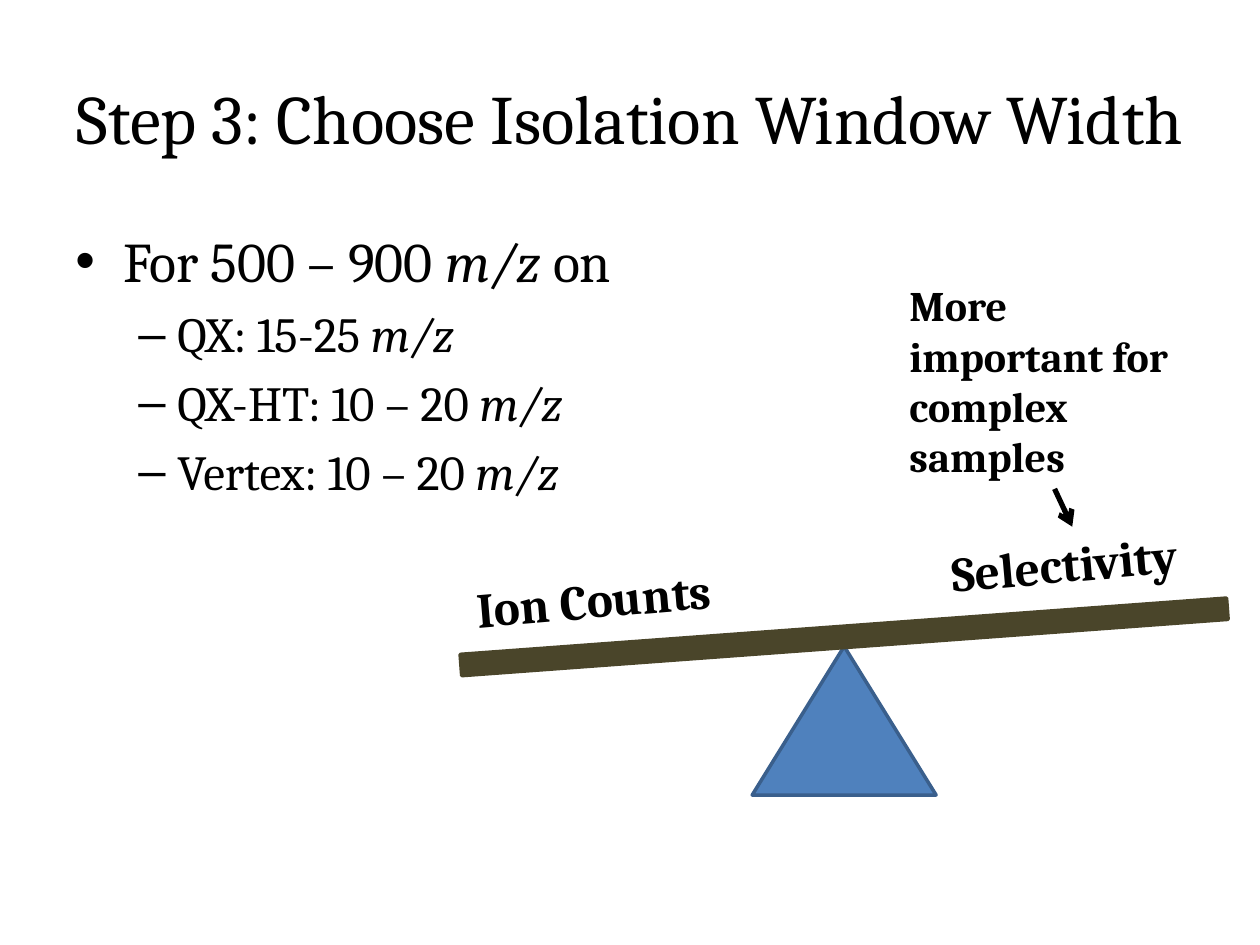
from lxml.etree import SubElement
from pptx import Presentation
from pptx.dml.color import RGBColor
from pptx.enum.shapes import MSO_CONNECTOR, MSO_SHAPE
from pptx.enum.text import MSO_ANCHOR, PP_ALIGN
from pptx.oxml.ns import qn
from pptx.util import Inches, Pt

FONT = "Cambria"
BLACK = RGBColor(0x00, 0x00, 0x00)
BLUE = RGBColor(0x4F, 0x81, 0xBD)
DARK_BLUE = RGBColor(0x3A, 0x5F, 0x8C)
BROWN = RGBColor(0x4A, 0x45, 0x2A)

INSTRUMENT_WINDOWS = ["QX: 15-25 ", "QX-HT: 10 – 20 ", "Vertex: 10 – 20 "]


def set_font(para, size, bold=False):
    para.font.name = FONT
    para.font.size = Pt(size)
    para.font.bold = bold
    para.font.color.rgb = BLACK


def add_box(page, left, top, width, height):
    box = page.shapes.add_textbox(Inches(left), Inches(top), Inches(width), Inches(height))
    box.text_frame.word_wrap = True
    return box


def add_title(page, text):
    frame = add_box(page, 0.5, 0.3, 9, 1.25).text_frame
    frame.margin_left = frame.margin_right = Inches(0.05)
    frame.vertical_anchor = MSO_ANCHOR.MIDDLE
    para = frame.paragraphs[0]
    para.text = text
    para.alignment = PP_ALIGN.CENTER
    set_font(para, 39.6)


def add_label(page, text, left, top, width, height, size, rotation=0):
    box = add_box(page, left, top, width, height)
    box.rotation = rotation
    para = box.text_frame.paragraphs[0]
    para.text = text
    set_font(para, size, bold=True)


def format_bullet(para, level, char, margin, hanging, size):
    para.level = level
    properties = para._p.get_or_add_pPr()
    properties.set("marL", str(Inches(margin)))
    properties.set("indent", str(-Inches(hanging)))
    SubElement(properties, qn("a:buFont")).set("typeface", "Arial")
    SubElement(properties, qn("a:buChar")).set("char", char)
    set_font(para, size)


def add_mz_text(para, before, after=""):
    """Write text around an italic m/z."""
    para.add_run().text = before
    span = para.add_run()
    span.text = "m/z"
    span.font.italic = True
    if after:
        para.add_run().text = after


def add_window_list(page):
    frame = add_box(page, 0.5, 1.75, 4.83, 4.95).text_frame
    heading = frame.paragraphs[0]
    format_bullet(heading, 0, "•", 0.38, 0.38, 32)
    add_mz_text(heading, "For 500 – 900 ", " on")
    for window in INSTRUMENT_WINDOWS:
        para = frame.add_paragraph()
        format_bullet(para, 1, "–", 0.81, 0.31, 28)
        para.space_before = Pt(5.6)
        add_mz_text(para, window)


def add_solid(page, kind, left, top, width, height, fill, outline, rotation=0):
    solid = page.shapes.add_shape(kind, Inches(left), Inches(top), Inches(width), Inches(height))
    solid.shadow.inherit = False
    solid.rotation = rotation
    solid.fill.solid()
    solid.fill.fore_color.rgb = fill
    solid.line.color.rgb = outline
    solid.line.width = Pt(2)


def add_arrow(page, start_x, start_y, end_x, end_y):
    arrow = page.shapes.add_connector(
        MSO_CONNECTOR.STRAIGHT, Inches(start_x), Inches(start_y), Inches(end_x), Inches(end_y)
    )
    arrow.line.color.rgb = BLACK
    arrow.line.width = Pt(3)
    SubElement(arrow.line._get_or_add_ln(), qn("a:tailEnd")).set("type", "arrow")
    SubElement(arrow._element.spPr, qn("a:effectLst"))


def main():
    deck = Presentation()
    deck.slide_width = Inches(10)
    deck.slide_height = Inches(7.5)
    page = deck.slides.add_slide(deck.slide_layouts[6])

    add_title(page, "Step 3: Choose Isolation Window Width")
    add_window_list(page)

    add_solid(page, MSO_SHAPE.ISOSCELES_TRIANGLE, 5.97, 5.13, 1.46, 1.18, BLUE, DARK_BLUE)
    add_solid(page, MSO_SHAPE.RECTANGLE, 3.65, 4.97, 6.1, 0.17, BROWN, BROWN, rotation=355.8)
    add_label(page, "Selectivity", 7.45, 4.18, 2.17, 0.57, 28, rotation=355)
    add_label(page, "Ion Counts", 3.68, 4.46, 2.3, 0.57, 28, rotation=355.2)

    add_label(page, "More important for complex samples", 7.12, 2.17, 2.5, 1.72, 24)
    add_arrow(page, 8.37, 3.88, 8.51, 4.18)

    deck.save("out.pptx")


if __name__ == "__main__":
    main()
